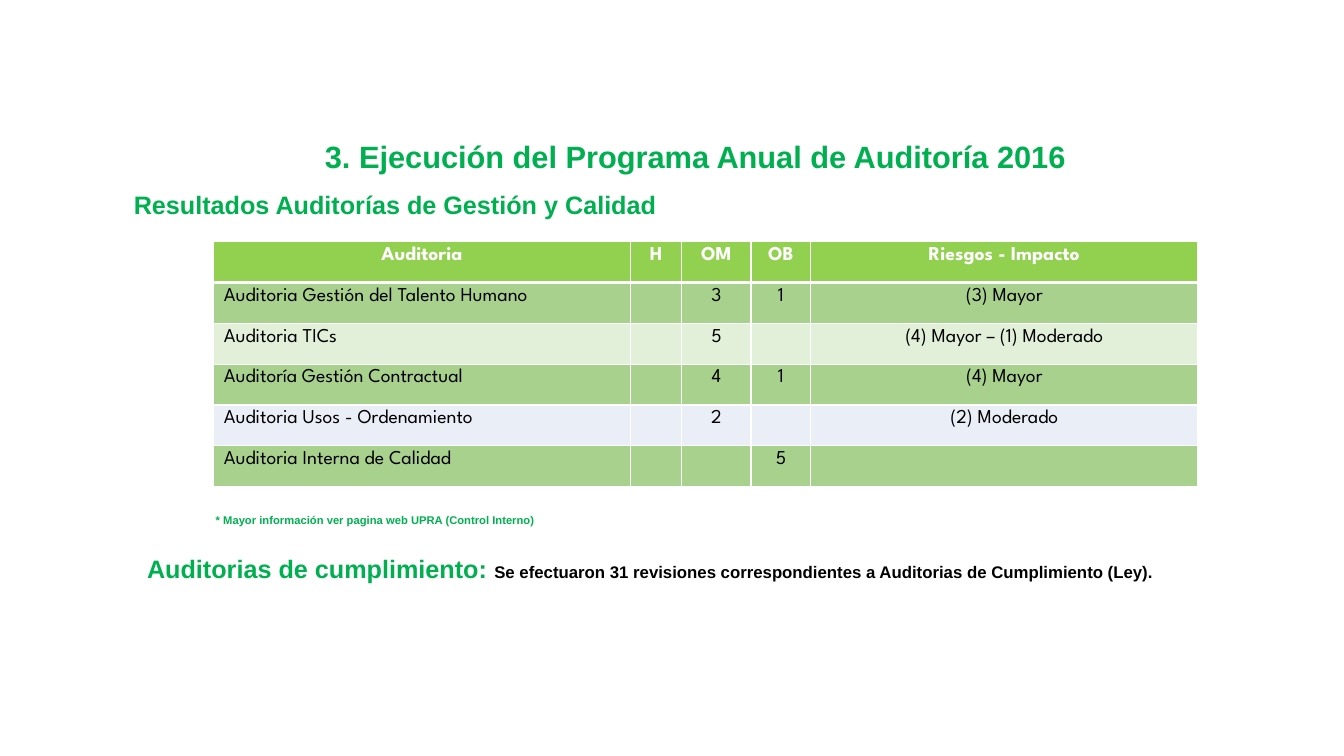
from lxml import etree
from pptx import Presentation
from pptx.dml.color import RGBColor
from pptx.enum import text
from pptx.oxml.ns import qn
from pptx.util import Pt

THEME = {
    "green": "00B050", "black": "000000", "white": "FFFFFF",
    "header": "92D050", "dark": "A9D18E", "light": "E2F0D9", "blue": "EAEFF7",
    "font": "Arial", "table_font": "League Spartan",
    "title": 22, "heading": 18, "table": 14, "body": 12, "note": 8,
}
LEFT, CENTER = text.PP_ALIGN.LEFT, text.PP_ALIGN.CENTER

# (left, top, width, height), alignment, runs of (wording, size, colour)
TEXTS = [
    ((177, 95, 639.5, 34), CENTER,
     [("3. Ejecución del Programa Anual de Auditoría 2016", "title", "green")]),
    ((88.5, 132, 520, 29), LEFT,
     [("Resultados Auditorías de Gestión y Calidad", "heading", "green")]),
    ((147, 363, 520, 17), LEFT,
     [("* Mayor información ver pagina web UPRA (Control Interno)", "note", "green")]),
    ((98, 392, 803.5, 29), LEFT,
     [("Auditorias de cumplimiento: ", "heading", "green"),
      ("Se efectuaron 31 revisiones correspondientes a Auditorias de Cumplimiento (Ley).",
       "body", "black")]),
]

# row fill, then the cells
AUDITS = [
    ("header", "Auditoria", "H", "OM", "OB", "Riesgos - Impacto"),
    ("dark", "Auditoria Gestión del Talento Humano", "", "3", "1", "(3) Mayor"),
    ("light", "Auditoria TICs", "", "5", "", "(4) Mayor – (1) Moderado"),
    ("dark", "Auditoría Gestión Contractual", "", "4", "1", "(4) Mayor"),
    ("blue", "Auditoria Usos - Ordenamiento", "", "2", "", "(2) Moderado"),
    ("dark", "Auditoria Interna de Calidad", "", "", "5", ""),
]
TABLE_LEFT, TABLE_TOP, ROW_HEIGHT = 152.7, 172.5, 29.2
COLUMNS = [297.5, 36.8, 49.5, 42.7, 276.5]


def color(name):
    return RGBColor.from_string(THEME[name])


def style(r, size, fill, bold=True, font="font"):
    r.font.name = THEME[font]
    r.font.size = Pt(THEME[size])
    r.font.bold = bold
    r.font.color.rgb = color(fill)


def add_text(slide, box, align, runs):
    tf = slide.shapes.add_textbox(*map(Pt, box)).text_frame
    tf.word_wrap = True
    tf.auto_size = text.MSO_AUTO_SIZE.SHAPE_TO_FIT_TEXT
    p = tf.paragraphs[0]
    p.alignment = align
    for wording, size, fill in runs:
        r = p.add_run()
        r.text = wording
        style(r, size, fill)


def add_borders(cell, top, bottom):
    """White cell edges; top and bottom are widths in points."""
    tcPr = cell._tc.get_or_add_tcPr()
    edges = [("lnL", 1), ("lnR", 1), ("lnT", top), ("lnB", bottom)]
    for i, (tag, width) in enumerate(edges):
        ln = etree.Element(qn(f"a:{tag}"), w=str(Pt(width)))
        fill = etree.SubElement(ln, qn("a:solidFill"))
        etree.SubElement(fill, qn("a:srgbClr"), val=THEME["white"])
        tcPr.insert(i, ln)


def add_audit_table(slide):
    frame = slide.shapes.add_table(
        len(AUDITS), len(COLUMNS), Pt(TABLE_LEFT), Pt(TABLE_TOP),
        Pt(sum(COLUMNS)), Pt(ROW_HEIGHT * len(AUDITS)))
    table = frame.table
    for column, width in zip(table.columns, COLUMNS):
        column.width = Pt(width)
    for i, (fill, *wordings) in enumerate(AUDITS):
        header = i == 0
        table.rows[i].height = Pt(ROW_HEIGHT)
        for j, wording in enumerate(wordings):
            cell = table.cell(i, j)
            cell.fill.solid()
            cell.fill.fore_color.rgb = color(fill)
            add_borders(cell, top=3 if i == 1 else 1, bottom=3 if header else 1)
            p = cell.text_frame.paragraphs[0]
            p.alignment = CENTER if header or j else LEFT
            if wording:
                p.text = wording
                style(p.runs[0], "table", "white" if header else "black",
                      bold=header, font="table_font")


def main():
    prs = Presentation()
    prs.slide_width, prs.slide_height = Pt(960), Pt(540)
    slide = prs.slides.add_slide(prs.slide_layouts[6])
    for box, align, runs in TEXTS:
        add_text(slide, box, align, runs)
    add_audit_table(slide)
    prs.save("out.pptx")


if __name__ == "__main__":
    main()
